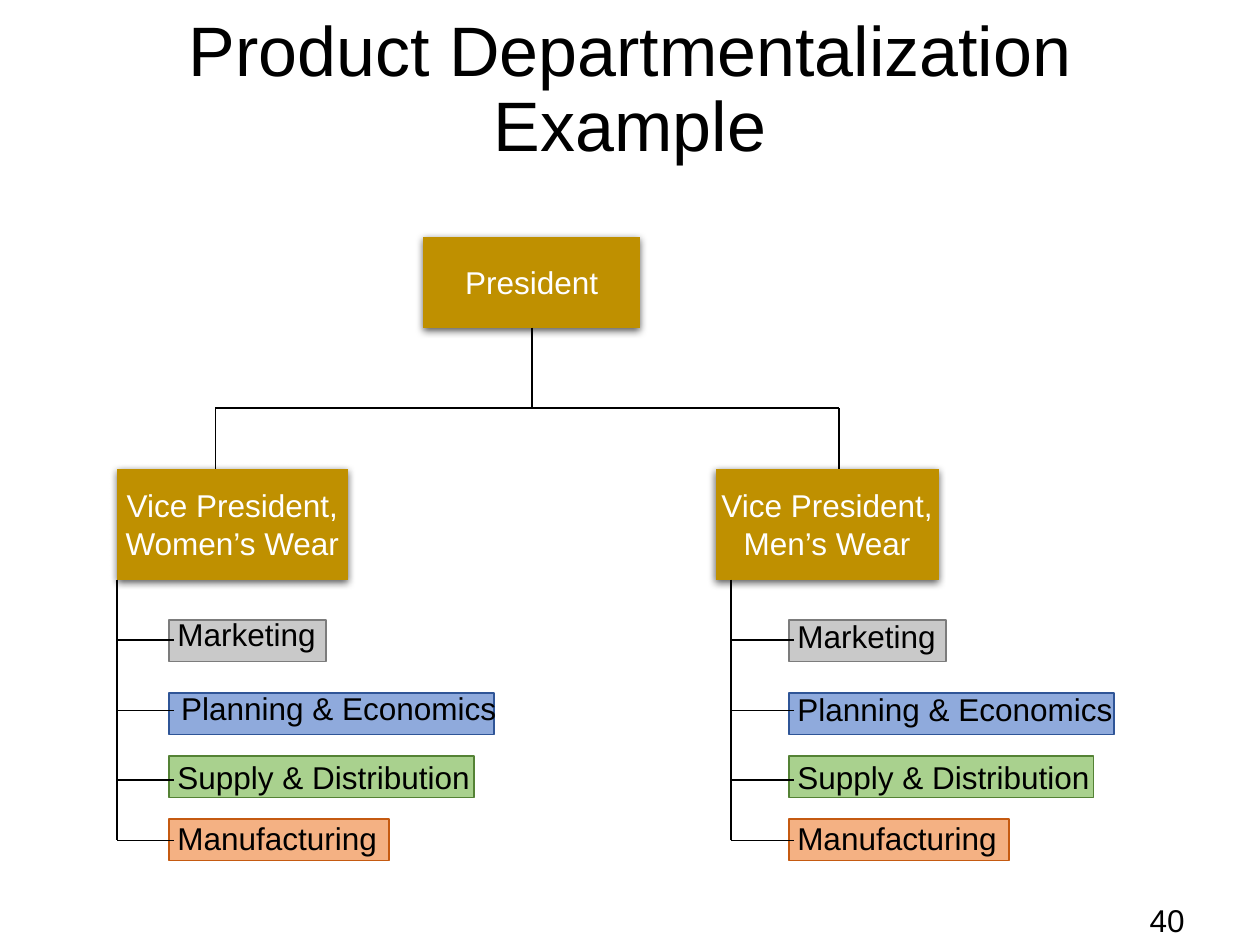
from dataclasses import dataclass

from lxml.etree import SubElement
from pptx import Presentation
from pptx.dml.color import RGBColor
from pptx.enum.shapes import MSO_CONNECTOR, MSO_SHAPE
from pptx.enum.text import MSO_ANCHOR, MSO_AUTO_SIZE, PP_ALIGN
from pptx.oxml.ns import qn
from pptx.shapes.autoshape import Shape
from pptx.shapes.connector import Connector
from pptx.slide import Slide
from pptx.text.text import TextFrame
from pptx.util import Inches, Pt

COLORS = {
    "black": "000000", "white": "FFFFFF", "gold": "BF9000",
    "gray": "C9C9C9", "gray line": "7C7C7C",
    "blue": "8FAADC", "blue line": "2F5597",
    "green": "A9D18E", "green line": "548235",
    "orange": "F4B183", "orange line": "C55A11",
}
FONT = "Arial"
BAR_HEIGHT = 0.33
LABEL_HEIGHT = 0.4
CROSSBAR_TOP = 3.24
VP_TOP, VP_HEIGHT = 3.72, 0.88


@dataclass(frozen=True)
class Department:
    name: str
    color: str
    bar_top: float
    bar_width: float
    branch_y: float


@dataclass(frozen=True)
class Division:
    title: str
    left: float
    width: float
    drop_x: float
    trunk_x: float
    branch_end: float
    bar_left: float
    label_positions: tuple[tuple[float, float], ...]
    label_widths: tuple[float, ...]


DEPARTMENTS = (
    Department("Marketing", "gray", 4.92, 1.25, 5.08),
    Department("Planning & Economics", "blue", 5.5, 2.58, 5.64),
    Department("Supply & Distribution", "green", 6, 2.42, 6.19),
    Department("Manufacturing", "orange", 6.5, 1.75, 6.67),
)
DIVISIONS = (
    Division("Vice President,\nWomen’s Wear", 0.93, 1.83, 1.71, 0.93, 1.38, 1.34,
             ((1.31, 4.83), (1.34, 5.42), (1.31, 5.97), (1.31, 6.45)),
             (1.53, 2.87, 2.56, 2.56)),
    Division("Vice President,\nMen’s Wear", 5.68, 1.77, 6.66, 5.8, 6.3, 6.26,
             ((6.23, 4.85), (6.23, 5.43), (6.23, 5.97), (6.23, 6.45)),
             (1.72, 2.87, 2.87, 2.87)),
)


def rgb(name: str) -> RGBColor:
    return RGBColor.from_string(COLORS[name])


def write_text(frame: TextFrame, text: str, size: float, color: str,
               alignment: PP_ALIGN) -> None:
    frame.text = text
    for paragraph in frame.paragraphs:
        paragraph.alignment = alignment
        paragraph.font.name = FONT
        paragraph.font.size = Pt(size)
        paragraph.font.color.rgb = rgb(color)


def add_text(slide: Slide, text: str, left: float, top: float, width: float,
             height: float = LABEL_HEIGHT, size: float = 18,
             alignment: PP_ALIGN = PP_ALIGN.LEFT) -> TextFrame:
    shape = slide.shapes.add_textbox(
        Inches(left), Inches(top), Inches(width), Inches(height))
    frame = shape.text_frame
    frame.word_wrap = True
    frame.auto_size = MSO_AUTO_SIZE.SHAPE_TO_FIT_TEXT
    write_text(frame, text, size, "black", alignment)
    return frame


def add_bar(slide: Slide, department: Department, left: float) -> None:
    shape = slide.shapes.add_shape(
        MSO_SHAPE.RECTANGLE, Inches(left), Inches(department.bar_top),
        Inches(department.bar_width), Inches(BAR_HEIGHT))
    shape.shadow.inherit = False
    shape.fill.solid()
    shape.fill.fore_color.rgb = rgb(department.color)
    shape.line.color.rgb = rgb(f"{department.color} line")
    shape.line.width = Pt(1)


def add_shadow(shape: Shape) -> None:
    shape.shadow.inherit = False
    effects = shape._element.spPr.find(qn("a:effectLst"))
    shadow = SubElement(effects, qn("a:outerShdw"), blurRad=str(Pt(4.5)),
                        dist=str(Pt(1.5)), dir="5400000", algn="ctr",
                        rotWithShape="0")
    color = SubElement(shadow, qn("a:srgbClr"), val=COLORS["black"])
    SubElement(color, qn("a:alpha"), val="63000")


def add_position(slide: Slide, text: str, left: float, top: float,
                 width: float, height: float) -> Shape:
    shape = slide.shapes.add_shape(
        MSO_SHAPE.FLOWCHART_PROCESS, Inches(left), Inches(top),
        Inches(width), Inches(height))
    add_shadow(shape)
    shape.fill.solid()
    shape.fill.fore_color.rgb = rgb("gold")
    shape.line.fill.background()
    frame = shape.text_frame
    frame.word_wrap = False
    frame.vertical_anchor = MSO_ANCHOR.MIDDLE
    write_text(frame, text, 18, "white", PP_ALIGN.CENTER)
    return shape


def add_line(slide: Slide, x1: float, y1: float, x2: float, y2: float) -> Connector:
    line = slide.shapes.add_connector(
        MSO_CONNECTOR.STRAIGHT, Inches(x1), Inches(y1), Inches(x2), Inches(y2))
    line.line.color.rgb = rgb("black")
    line.line.width = Pt(1)
    SubElement(line._element.spPr, qn("a:effectLst"))
    return line


def add_division(slide: Slide, division: Division) -> None:
    add_line(slide, division.drop_x, CROSSBAR_TOP, division.drop_x, VP_TOP)
    add_position(slide, division.title, division.left, VP_TOP,
                 division.width, VP_HEIGHT)
    add_line(slide, division.trunk_x, VP_TOP + VP_HEIGHT,
             division.trunk_x, DEPARTMENTS[-1].branch_y)
    for department, (left, top), width in zip(
            DEPARTMENTS, division.label_positions, division.label_widths):
        add_line(slide, division.trunk_x, department.branch_y,
                 division.branch_end, department.branch_y)
        add_text(slide, department.name, left, top, width)


def main() -> None:
    presentation = Presentation()
    presentation.slide_width = Inches(10)
    presentation.slide_height = Inches(7.5)
    slide = presentation.slides.add_slide(presentation.slide_layouts[6])

    # Slide number
    add_text(slide, "40", 8.25, 7.1, 1.25, alignment=PP_ALIGN.RIGHT)

    # Coloured department bars, behind lines and labels
    for division in DIVISIONS:
        for department in DEPARTMENTS:
            add_bar(slide, department, division.bar_left)

    # Title
    title = add_text(slide, "Product Departmentalization Example", 0.5, 0, 9,
                     1.45, size=40, alignment=PP_ALIGN.CENTER)
    title.auto_size = MSO_AUTO_SIZE.NONE
    title.vertical_anchor = MSO_ANCHOR.MIDDLE
    title.paragraphs[0].line_spacing = 0.9

    # President and crossbar
    president = add_position(slide, "President", 3.36, 1.88, 1.72, 0.72)
    stem = add_line(slide, 4.22, 2.6, 4.22, CROSSBAR_TOP)
    stem.begin_connect(president, 2)
    add_line(slide, DIVISIONS[0].drop_x, CROSSBAR_TOP,
             DIVISIONS[1].drop_x, CROSSBAR_TOP)

    # Divisions with their departments
    for division in DIVISIONS:
        add_division(slide, division)

    presentation.save("out.pptx")


if __name__ == "__main__":
    main()
